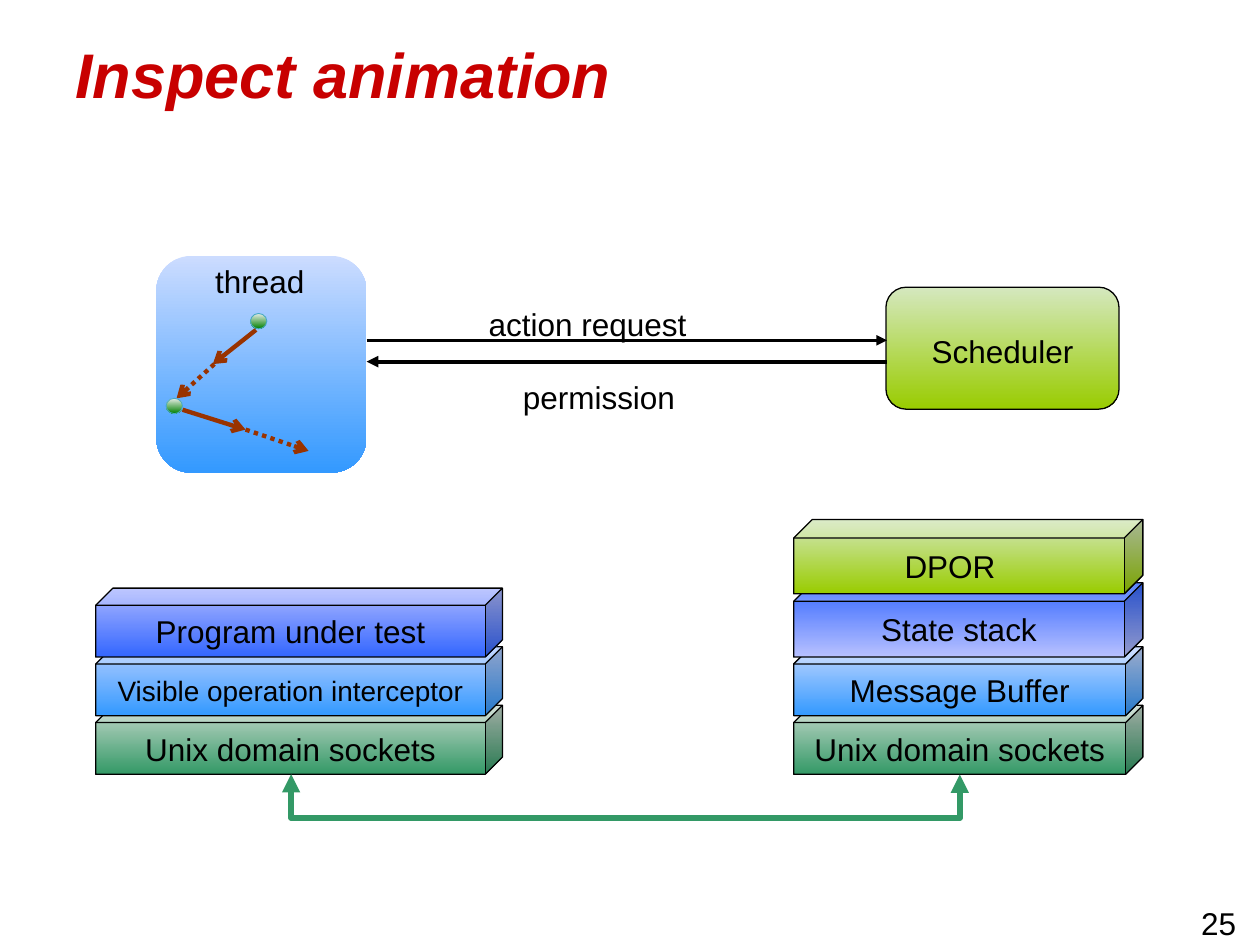
"""Build a slide showing how a tested thread talks to the scheduler."""
from pptx import Presentation
from pptx import util as u
from pptx.dml import color as c
from pptx.enum import dml, shapes, text
from pptx.oxml import ns
from lxml import etree

COLORS = {
    "black": "000000", "title": "C80000", "arrow": "993300", "rim": "46AAC5",
    "green": "339966", "blue": "3399FF", "pale_blue": "CCDCFF",
    "lime": "99CC00", "pale_lime": "D5E8BF", "leaf": "008000", "pale_leaf": "E8EDE8",
}
FADES = {
    "thread": ("pale_blue", "blue"),
    "scheduler": ("pale_lime", "lime"),
    "node": ("pale_leaf", "leaf"),
    "sockets": ("C6D8CC", "green"),
    "buffer": ("C3D7FF", "blue"),
    "state": ("3366FF", "B8C1FF"),
    "dpor": ("D3E7BB", "lime"),
    "interceptor": ("B3CDFF", "blue"),
    "program": ("ADB8FF", "3366FF"),
}
LABELS = [
    ("action request", 9.6, 6.02, 4.5),
    ("permission", 10.29, 7.49, 3.58),
]
MESSAGES = [
    ((7.39, 6.86), (17.88, 6.86), 2),
    ((17.88, 7.29), (7.39, 7.29), 2.25),
]
FIRST_STEPS = [
    ((5.16, 6.65), (4.29, 7.34), False),
    ((4.32, 7.34), (3.56, 8.03), True),
]
SECOND_STEPS = [
    ((3.68, 8.26), (4.95, 8.66), False),
    ((4.95, 8.66), (6.22, 9.09), True),
]
NODES = [(5.05, 6.32), (3.35, 8.03)]
STACK_BOTTOM = 15.61
STACKS = [
    (16, 7.04, [
        ("Unix domain sockets", "sockets", 1.39, 18, 0),
        ("Message Buffer", "buffer", 1.39, 18, 0),
        ("State stack", "state", 1.5, 18, 0),
        ("DPOR", "dpor", 1.5, 18, 0.36),
    ]),
    (1.93, 8.2, [
        ("Unix domain sockets", "sockets", 1.39, 18, 0),
        ("Visible operation interceptor", "interceptor", 1.39, 16, 0),
        ("Program under test", "program", 1.39, 18, 0),
    ]),
]
LINK_LEFT, LINK_RIGHT, LINK_DROP, LINK_THIN = 5.87, 19.35, 0.88, 0.01


def rgb(name):
    return c.RGBColor.from_string(COLORS.get(name, name))


def write(shape, words, size=18, align=text.PP_ALIGN.LEFT, color="black",
          wrap=False, anchor=text.MSO_ANCHOR.TOP):
    frame = shape.text_frame
    frame.text = words
    frame.word_wrap = wrap
    frame.vertical_anchor = anchor
    para = frame.paragraphs[0]
    para.alignment = align
    font = para.runs[0].font
    font.name, font.size = "Arial", u.Pt(size)
    font.color.rgb = rgb(color)
    return para


def add_label(page, words, left, top, width, height=1.02, **style):
    box = page.shapes.add_textbox(*map(u.Cm, (left, top, width, height)))
    return box, write(box, words, **style)


def add_block(page, kind, place, fade, line=None, weight=0.75):
    block = page.shapes.add_shape(kind, *map(u.Cm, place))
    block.shadow.inherit = False
    block.fill.gradient()
    block.fill.gradient_angle = 270
    for stop, name in zip(block.fill.gradient_stops, FADES[fade]):
        stop.color.rgb = rgb(name)
    if line:
        block.line.color.rgb = rgb(line)
        block.line.width = u.Pt(weight)
    else:
        block.line.fill.background()
    return block


def add_arrow(page, start, end, color, weight, tips, dotted=False,
              kind=shapes.MSO_CONNECTOR.STRAIGHT):
    arrow = page.shapes.add_connector(kind, *map(u.Cm, start + end))
    arrow.line.color.rgb = rgb(color)
    arrow.line.width = u.Pt(weight)
    if dotted:
        arrow.line.dash_style = dml.MSO_LINE.ROUND_DOT
    for tag, tip in tips.items():
        etree.SubElement(arrow.line._get_or_add_ln(), ns.qn(tag), type=tip)
    etree.SubElement(arrow._element.spPr, ns.qn("a:effectLst"))
    return arrow


def add_steps(page, steps):
    return [add_arrow(page, start, end, "arrow", 2.5, {"a:tailEnd": "arrow"}, dotted)
            for start, end, dotted in steps]


def add_stack(page, left, width, layers):
    bottom = STACK_BOTTOM
    for words, fade, height, size, extra in layers:
        cube = add_block(page, shapes.MSO_SHAPE.CUBE,
                         (left, bottom - height, width, height), fade, "black")
        cube.adjustments[0] = 0.25
        write(cube, words, size, text.PP_ALIGN.CENTER, anchor=text.MSO_ANCHOR.MIDDLE)
        cube.text_frame.margin_right = u.Cm(0.25 + extra)
        bottom -= 0.85 * height


def add_link(page):
    span = LINK_RIGHT - LINK_LEFT
    middle = (LINK_LEFT + LINK_RIGHT) / 2
    start = (middle - LINK_THIN / 2, STACK_BOTTOM - span / 2)
    end = (middle + LINK_THIN / 2, STACK_BOTTOM + span / 2)
    link = add_arrow(page, start, end, "green", 3.5,
                     {"a:headEnd": "triangle", "a:tailEnd": "triangle"},
                     kind=shapes.MSO_CONNECTOR.ELBOW)
    frame = link._element.spPr.find(ns.qn("a:xfrm"))
    frame.set("rot", "16200000")
    frame.set("flipH", "1")
    geometry = link._element.spPr.find(ns.qn("a:prstGeom"))
    guides = geometry.find(ns.qn("a:avLst"))
    if guides is None:
        guides = etree.SubElement(geometry, ns.qn("a:avLst"))
    ratio = round(LINK_DROP / LINK_THIN * 100000)
    etree.SubElement(guides, ns.qn("a:gd"), name="adj1", fmla=f"val {ratio}")


def main():
    deck = Presentation()
    deck.slide_width, deck.slide_height = u.Cm(25.4), u.Cm(19.05)
    page = deck.slides.add_slide(deck.slide_layouts[6])

    add_label(page, "25", 19.89, 18.19, 5.28, 0.84, align=text.PP_ALIGN.RIGHT,
              anchor=text.MSO_ANCHOR.MIDDLE)
    title = add_label(page, "Inspect animation", 1.27, 0.76, 22.86, 2.21,
                      size=36, color="title", wrap=True)[1]
    title.line_spacing = 0.9
    title.runs[0].font.bold = title.runs[0].font.italic = True

    scheduler = add_block(page, shapes.MSO_SHAPE.ROUNDED_RECTANGLE,
                          (17.86, 5.79, 4.7, 2.46), "scheduler", "black")
    write(scheduler, "Scheduler", align=text.PP_ALIGN.CENTER,
          anchor=text.MSO_ANCHOR.MIDDLE)
    scheduler.text_frame.margin_top = u.Cm(0.25)

    for label in LABELS:
        add_label(page, *label)
    for start, end, weight in MESSAGES:
        add_arrow(page, start, end, "black", weight, {"a:tailEnd": "triangle"})

    thread = add_block(page, shapes.MSO_SHAPE.ROUNDED_RECTANGLE,
                       (3.15, 5.16, 4.24, 4.37), "thread")
    caption = add_label(page, "thread", 4.09, 5.16, 2.31)[0]
    page.shapes.add_group_shape([thread, caption])
    page.shapes.add_group_shape(add_steps(page, FIRST_STEPS))
    add_steps(page, SECOND_STEPS)
    for left, top in NODES:
        add_block(page, shapes.MSO_SHAPE.OVAL, (left, top, 0.33, 0.31),
                  "node", "rim", 0.5)

    for stack in STACKS:
        add_stack(page, *stack)
    add_link(page)
    deck.save("out.pptx")


if __name__ == "__main__":
    main()
